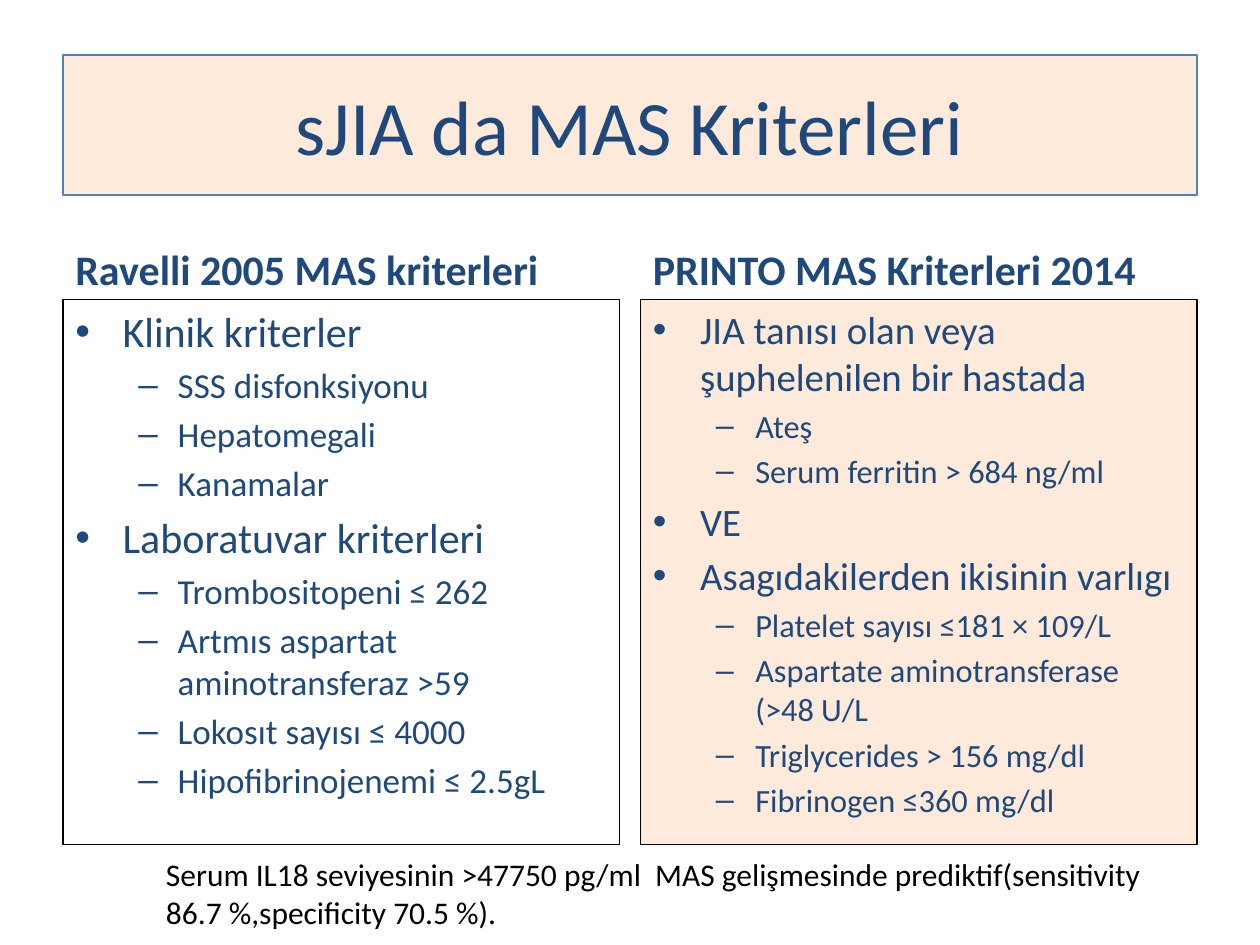
from dataclasses import dataclass

from lxml import etree
from pptx import Presentation
from pptx.dml.color import RGBColor
from pptx.enum import shapes, text
from pptx.oxml import ns
from pptx.util import Pt


@dataclass(frozen=True)
class Theme:
    font: str = "Calibri"
    navy: RGBColor = RGBColor(0x1F, 0x49, 0x7D)
    peach: RGBColor = RGBColor(0xFD, 0xEA, 0xDA)
    blue: RGBColor = RGBColor(0x4F, 0x81, 0xBD)
    black: RGBColor = RGBColor(0, 0, 0)
    white: RGBColor = RGBColor(255, 255, 255)
    border: float = 0.75
    title: float = 44
    heading: float = 24
    note: float = 18


THEME = Theme()
# For each list level: bullet character, left margin, hanging indent
LEVELS = (("•", 27, 27), ("–", 58.5, 22.5))
GAP_SHARE = 0.2  # space before a paragraph, as a share of its type size

RAVELLI = [
    (0, "Klinik kriterler"),
    (1, "SSS disfonksiyonu"),
    (1, "Hepatomegali"),
    (1, "Kanamalar"),
    (0, "Laboratuvar kriterleri"),
    (1, "Trombositopeni ≤ 262"),
    (1, "Artmıs aspartat aminotransferaz >59"),
    (1, "Lokosıt sayısı ≤ 4000"),
    (1, "Hipofibrinojenemi ≤ 2.5gL"),
]
PRINTO = [
    (0, "JIA tanısı olan veya şuphelenilen bir hastada"),
    (1, "Ateş"),
    (1, "Serum ferritin > 684 ng/ml"),
    (0, "VE"),
    (0, "Asagıdakilerden ikisinin varlıgı"),
    (1, "Platelet sayısı ≤181 × 109/L"),
    (1, "Aspartate aminotransferase (>48 U/L"),
    (1, "Triglycerides > 156 mg/dl"),
    (1, "Fibrinogen ≤360 mg/dl"),
]


def paint(shape, fill, line):
    if fill is None:
        shape.fill.background()
    else:
        shape.fill.solid()
        shape.fill.fore_color.rgb = fill
    shape.line.color.rgb = line
    shape.line.width = Pt(THEME.border)


def write(paragraph, words, size, color, bold=False):
    run = paragraph.add_run()
    run.text = words
    run.font.name = THEME.font
    run.font.size = Pt(size)
    run.font.bold = bold
    run.font.color.rgb = color


def set_bullet(paragraph, level):
    mark, margin, hanging = LEVELS[level]
    paragraph.level = level
    properties = paragraph._p.get_or_add_pPr()
    properties.set("marL", str(Pt(margin)))
    properties.set("indent", str(-Pt(hanging)))
    etree.SubElement(properties, ns.qn("a:buFont")).set("typeface", "Arial")
    etree.SubElement(properties, ns.qn("a:buChar")).set("char", mark)


def add_panel(slide, box, fill, line):
    panel = slide.shapes.add_shape(shapes.MSO_SHAPE.RECTANGLE, *map(Pt, box))
    panel.shadow.inherit = False
    paint(panel, fill, line)
    frame = panel.text_frame
    frame.word_wrap = True
    frame.vertical_anchor = text.MSO_ANCHOR.TOP
    frame.paragraphs[0].alignment = text.PP_ALIGN.LEFT
    return frame


def fill_title(slide, box, words):
    title = slide.shapes.title
    title.left, title.top, title.width, title.height = map(Pt, box)
    paint(title, THEME.peach, THEME.blue)
    title.text_frame.vertical_anchor = text.MSO_ANCHOR.MIDDLE
    paragraph = title.text_frame.paragraphs[0]
    paragraph.alignment = text.PP_ALIGN.CENTER
    write(paragraph, words, THEME.title, THEME.navy)


def add_criteria(slide, box, heading, items, sizes, fill):
    """Place a heading above a bordered two-level list; sizes holds one type size per level."""
    left, top, width, height = box
    heading_height = 50.4
    label = slide.shapes.add_textbox(*map(Pt, (left, top, width, heading_height)))
    label.text_frame.word_wrap = True
    label.text_frame.vertical_anchor = text.MSO_ANCHOR.BOTTOM
    write(label.text_frame.paragraphs[0], heading, THEME.heading, THEME.navy, bold=True)

    list_box = (left, top + heading_height, width, height - heading_height)
    frame = add_panel(slide, list_box, fill, THEME.black)
    for number, (level, words) in enumerate(items):
        paragraph = frame.add_paragraph() if number else frame.paragraphs[0]
        paragraph.alignment = text.PP_ALIGN.LEFT
        if number:
            paragraph.space_before = Pt(round(GAP_SHARE * sizes[level], 1))
        set_bullet(paragraph, level)
        write(paragraph, words, sizes[level], THEME.navy)


def add_note(slide, box, words):
    frame = add_panel(slide, box, None, THEME.white)
    write(frame.paragraphs[0], words, THEME.note, THEME.black)


def main():
    deck = Presentation()
    deck.slide_width, deck.slide_height = Pt(720), Pt(540)
    slide = deck.slides.add_slide(deck.slide_layouts.get_by_name("Title Only"))

    margin, gutter = 36, 12
    content = 720 - 2 * margin
    column = (content - gutter) / 2
    top, height = 120.9, 361.6

    fill_title(slide, (margin, 31.5, content, 80), "sJIA da MAS Kriterleri")
    add_criteria(slide, (margin, top, column, height),
                 "Ravelli 2005 MAS kriterleri", RAVELLI, (24, 20), None)
    add_criteria(slide, (margin + column + gutter, top, column, height),
                 "PRINTO MAS Kriterleri 2014", PRINTO, (22.2, 18.5), THEME.peach)
    add_note(slide, (87.8, 485.3, 578.2, 51),
             "Serum IL18 seviyesinin >47750 pg/ml  MAS gelişmesinde "
             "prediktif(sensitivity 86.7 %,specificity 70.5 %).")
    deck.save("out.pptx")


if __name__ == "__main__":
    main()
